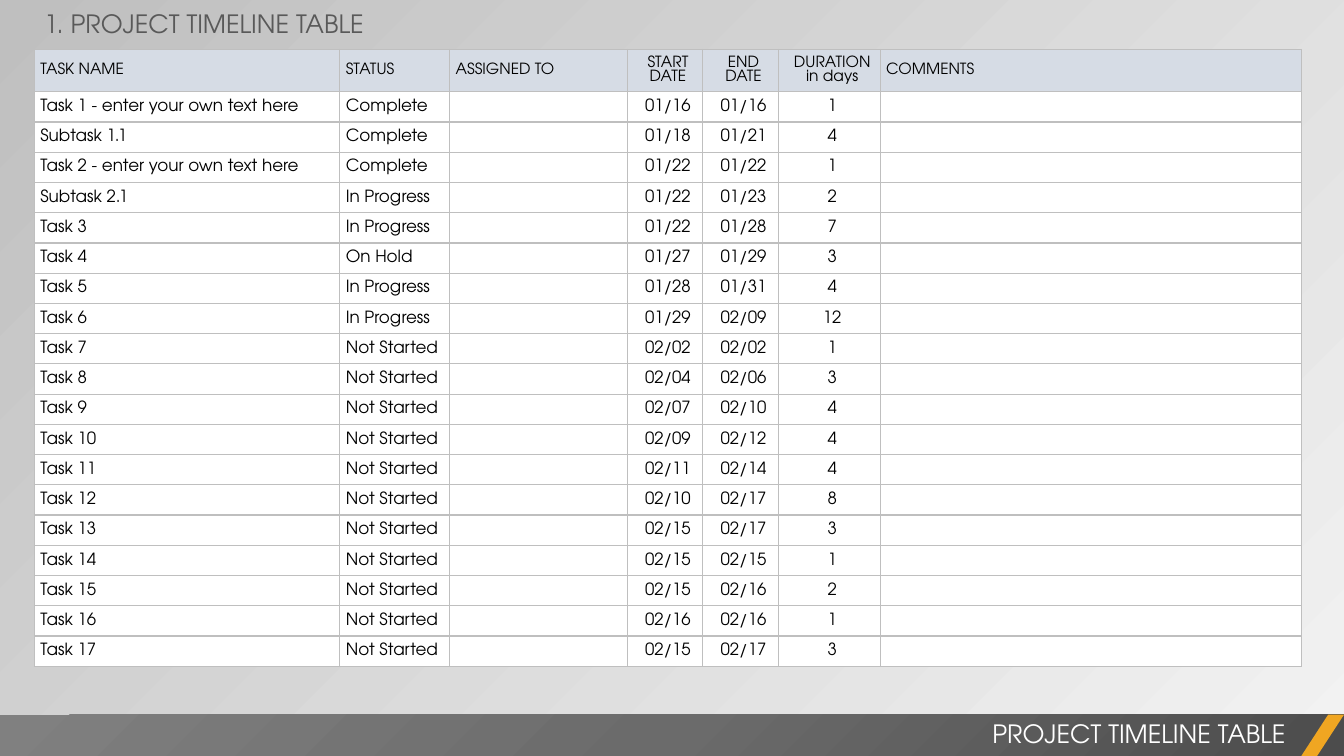
from lxml import etree
from pptx import Presentation
from pptx.dml.color import RGBColor
from pptx.enum.shapes import MSO_SHAPE
from pptx.enum.text import MSO_ANCHOR, MSO_AUTO_SIZE, PP_ALIGN
from pptx.oxml.ns import qn
from pptx.util import Inches, Pt

LEFT, CENTER, RIGHT = PP_ALIGN.LEFT, PP_ALIGN.CENTER, PP_ALIGN.RIGHT
MIDDLE = MSO_ANCHOR.MIDDLE
FIT_SHAPE = MSO_AUTO_SIZE.SHAPE_TO_FIT_TEXT
RECTANGLE, PARALLELOGRAM = MSO_SHAPE.RECTANGLE, MSO_SHAPE.PARALLELOGRAM

FONT = "TeX Gyre Adventor"
BLACK = RGBColor(0x00, 0x00, 0x00)
WHITE = RGBColor(0xFF, 0xFF, 0xFF)
HEADER_BLUE = RGBColor(0xD6, 0xDC, 0xE5)
GRID_GRAY = RGBColor(0xBF, 0xBF, 0xBF)
PALE_GRAY = RGBColor(0xF2, 0xF2, 0xF2)
TITLE_GRAY = RGBColor(0x59, 0x59, 0x59)
ORANGE = RGBColor(0xF0, 0xA6, 0x22)
BAR_STOPS = (
    (0, RGBColor(0x4C, 0x4C, 0x4C)),
    (50, RGBColor(0x6B, 0x6B, 0x6B)),
    (100, RGBColor(0x80, 0x80, 0x80)),
)

COLUMNS = [
    ("TASK NAME", 3.03, LEFT),
    ("STATUS", 1.09, LEFT),
    ("ASSIGNED TO", 1.76, LEFT),
    ("START DATE", 0.75, CENTER),
    ("END DATE", 0.75, CENTER),
    ("DURATION\nin days", 1.01, CENTER),
    ("COMMENTS", 4.18, LEFT),
]
TASKS = [
    ("Task 1 - enter your own text here", "Complete", "01/16", "01/16", 1),
    ("Subtask 1.1", "Complete", "01/18", "01/21", 4),
    ("Task 2 - enter your own text here", "Complete", "01/22", "01/22", 1),
    ("Subtask 2.1", "In Progress", "01/22", "01/23", 2),
    ("Task 3", "In Progress", "01/22", "01/28", 7),
    ("Task 4", "On Hold", "01/27", "01/29", 3),
    ("Task 5", "In Progress", "01/28", "01/31", 4),
    ("Task 6", "In Progress", "01/29", "02/09", 12),
    ("Task 7", "Not Started", "02/02", "02/02", 1),
    ("Task 8", "Not Started", "02/04", "02/06", 3),
    ("Task 9", "Not Started", "02/07", "02/10", 4),
    ("Task 10", "Not Started", "02/09", "02/12", 4),
    ("Task 11", "Not Started", "02/11", "02/14", 4),
    ("Task 12", "Not Started", "02/10", "02/17", 8),
    ("Task 13", "Not Started", "02/15", "02/17", 3),
    ("Task 14", "Not Started", "02/15", "02/15", 1),
    ("Task 15", "Not Started", "02/15", "02/16", 2),
    ("Task 16", "Not Started", "02/16", "02/16", 1),
    ("Task 17", "Not Started", "02/15", "02/17", 3),
]


def write(frame, text, size=12, color=BLACK, align=LEFT, spacing=None):
    for index, line in enumerate(text.split("\n")):
        para = frame.add_paragraph() if index else frame.paragraphs[0]
        para.alignment = align
        if spacing:
            para.line_spacing = Pt(spacing)
        if not line:
            etree.SubElement(para._p, qn("a:endParaRPr"), sz=str(size * 100))
            continue
        span = para.add_run()
        span.text = line
        span.font.size = Pt(size)
        span.font.name = FONT
        span.font.color.rgb = color


def add_label(page, left, top, width, height, text, wrap=True, **style):
    box = page.shapes.add_textbox(
        Inches(left), Inches(top), Inches(width), Inches(height))
    box.text_frame.word_wrap = wrap
    box.text_frame.auto_size = FIT_SHAPE
    write(box.text_frame, text, **style)


def add_plain_shape(page, kind, left, top, width, height, color):
    shape = page.shapes.add_shape(
        kind, Inches(left), Inches(top), Inches(width), Inches(height))
    shape.shadow.inherit = False
    shape.fill.solid()
    shape.fill.fore_color.rgb = color
    shape.line.fill.background()
    return shape


def add_solid(parent, color):
    fill = etree.SubElement(parent, qn("a:solidFill"))
    etree.SubElement(fill, qn("a:srgbClr"), val=str(color))


def fill_radial(shape, stops):
    gradient = etree.Element(qn("a:gradFill"), rotWithShape="1")
    stop_list = etree.SubElement(gradient, qn("a:gsLst"))
    for position, color in stops:
        stop = etree.SubElement(stop_list, qn("a:gs"), pos=str(position * 1000))
        etree.SubElement(stop, qn("a:srgbClr"), val=str(color))
    circle = etree.SubElement(gradient, qn("a:path"), path="circle")
    etree.SubElement(circle, qn("a:fillToRect"), l="100000", t="100000")
    properties = shape._element.spPr
    properties.replace(properties.find(qn("a:solidFill")), gradient)


def format_cell(cell, fill):
    cell.margin_left = Inches(0.06)
    cell.margin_top = cell.margin_right = cell.margin_bottom = 0
    cell.vertical_anchor = MIDDLE
    properties = cell._tc.get_or_add_tcPr()
    for side in ("lnL", "lnR", "lnT", "lnB"):
        line = etree.SubElement(properties, qn(f"a:{side}"), w=str(Pt(1)))
        add_solid(line, GRID_GRAY)
    cell.fill.solid()
    cell.fill.fore_color.rgb = fill


def add_task_table(page, left, top, width, header_height=0.42, row_height=0.3):
    height = header_height + row_height * len(TASKS)
    table = page.shapes.add_table(
        len(TASKS) + 1, len(COLUMNS),
        Inches(left), Inches(top), Inches(width), Inches(height)).table
    table.first_row = table.horz_banding = False
    for column, (_, column_width, _) in zip(table.columns, COLUMNS):
        column.width = Inches(column_width)
    rows = [[heading for heading, _, _ in COLUMNS]]
    rows += [(name, status, "", start, end, str(days), "")
             for name, status, start, end, days in TASKS]
    for row_index, values in enumerate(rows):
        is_header = row_index == 0
        table.rows[row_index].height = Inches(
            header_height if is_header else row_height)
        for column_index, text in enumerate(values):
            align = COLUMNS[column_index][2]
            cell = table.cell(row_index, column_index)
            format_cell(cell, HEADER_BLUE if is_header else WHITE)
            write(cell.text_frame, text, size=11 if is_header else 12,
                  align=align, spacing=10 if is_header else None)


def add_footer(page, left, top, width, height):
    bar = add_plain_shape(page, RECTANGLE, left, top, width, height, TITLE_GRAY)
    fill_radial(bar, BAR_STOPS)
    add_label(page, left + width - 8.08, top - 0.01, 7.6, 0.4,
              "PROJECT TIMELINE TABLE", size=18, color=WHITE, align=RIGHT)
    slash = add_plain_shape(
        page, PARALLELOGRAM, left + width - 0.43, top, 0.43, height, ORANGE)
    slash.adjustments[0] = 0.65


def fill_background(page):
    fill = page.background.fill
    fill.gradient()
    fill.gradient_angle = 135
    for stop, color in zip(fill.gradient_stops, (PALE_GRAY, GRID_GRAY)):
        stop.color.rgb = color


def main():
    deck = Presentation()
    deck.slide_width, deck.slide_height = Inches(13.33), Inches(7.5)
    page = deck.slides.add_slide(deck.slide_layouts[6])
    fill_background(page)
    add_task_table(page, 0.34, 0.49, 12.57)
    add_label(page, 0.34, 0.03, 3.43, 0.4, "1. PROJECT TIMELINE TABLE",
              wrap=False, size=18, color=TITLE_GRAY)
    add_footer(page, 0, 7.09, 13.33, 0.42)
    deck.save("out.pptx")


if __name__ == "__main__":
    main()
